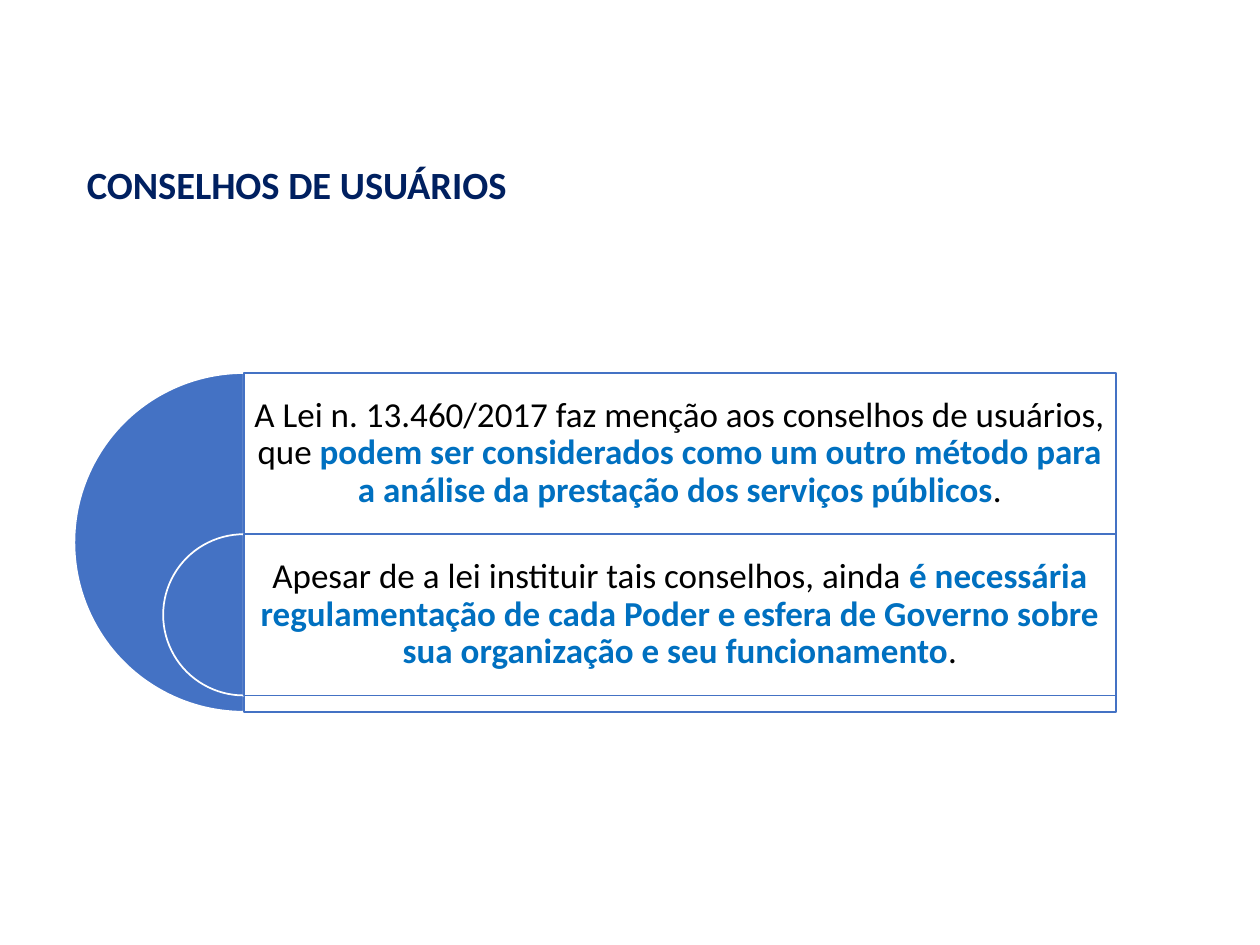
from dataclasses import dataclass

from lxml import etree
from pptx import Presentation
from pptx import util as u
from pptx.dml.color import RGBColor
from pptx.enum import shapes, text
from pptx.oxml.ns import qn

INK = {"navy": "002060", "blue": "4472C4", "key": "0070C0",
       "white": "FFFFFF", "black": "000000"}
LEFT, TOP = 1.5, 7.52        # outer half disc, cm
BIG, ROW = 6.83, 3.25        # disc diameter and row height, cm
AXIS, WIDE = LEFT + BIG / 2, 17.58


@dataclass
class Run:
    words: str
    color: str = "black"
    bold: bool = False


@dataclass
class Row:
    size: float              # diameter of the half disc and height of its panel
    top: float
    runs: list[Run]


ROWS = [
    Row(BIG, TOP, [
        Run("A Lei n. 13.460/2017 faz menção aos conselhos de usuários, que "),
        Run("podem ser considerados como um outro método para a análise da "
            "prestação dos serviços públicos", "key", True),
        Run(".")]),
    Row(ROW, TOP + ROW, [
        Run("Apesar de a lei instituir tais conselhos, ainda "),
        Run("é necessária regulamentação de cada Poder e esfera de Governo "
            "sobre sua organização e seu funcionamento", "key", True),
        Run(".")]),
]


def rgb(name: str) -> RGBColor:
    return RGBColor.from_string(INK[name])


def put_shape(slide, kind, x: float, y: float, w: float, h: float,
              fill: str, line: str):
    shape = slide.shapes.add_shape(kind, u.Cm(x), u.Cm(y), u.Cm(w), u.Cm(h))
    shape.shadow.inherit = False
    shape.fill.solid()
    shape.fill.fore_color.rgb = rgb(fill)
    shape.line.color.rgb = rgb(line)
    shape.line.width = u.Pt(1)
    return shape


def put_text(slide, runs: list[Run], x: float, y: float, w: float, h: float, *,
             size: float, align=text.PP_ALIGN.LEFT,
             anchor=text.MSO_ANCHOR.TOP, pad: float | None = None,
             space: float = 1.0) -> None:
    box = slide.shapes.add_textbox(u.Cm(x), u.Cm(y), u.Cm(w), u.Cm(h))
    frame = box.text_frame
    frame.word_wrap = True
    frame.vertical_anchor = anchor
    if pad is not None:
        frame.margin_left = frame.margin_right = u.Cm(pad)
        frame.margin_top = frame.margin_bottom = u.Cm(pad)
    para = frame.paragraphs[0]
    para.alignment = align
    para.line_spacing = space
    for item in runs:
        run = para.add_run()
        run.text = item.words
        run.font.name = "Calibri"
        run.font.size = u.Pt(size)
        run.font.bold = item.bold
        run.font.color.rgb = rgb(item.color)


def set_alpha(shape, share: int) -> None:
    """Make a solid fill opaque to the given percentage."""
    color = shape.fill._xPr.find(qn("a:solidFill"))[0]
    etree.SubElement(color, qn("a:alpha")).set("val", str(share * 1000))


def put_row(slide, row: Row) -> None:
    """Draw a left half disc, its panel and the text in the panel's top."""
    disc = put_shape(slide, shapes.MSO_SHAPE.PIE, AXIS - row.size / 2, row.top,
                     row.size, row.size, "blue", "white")
    disc.adjustments[0], disc.adjustments[1] = 54, 162   # 90 to 270 degrees
    panel = put_shape(slide, shapes.MSO_SHAPE.RECTANGLE, AXIS, row.top,
                      WIDE, row.size, "white", "blue")
    set_alpha(panel, 90)
    put_text(slide, row.runs, AXIS, row.top, WIDE, ROW, size=20, pad=0.2,
             align=text.PP_ALIGN.CENTER, anchor=text.MSO_ANCHOR.MIDDLE,
             space=0.9)


def main() -> None:
    deck = Presentation()
    deck.slide_width, deck.slide_height = u.Cm(25.4), u.Cm(19.05)
    slide = deck.slides.add_slide(deck.slide_layouts[6])
    put_text(slide, [Run("CONSELHOS DE USUÁRIOS", "navy", True)],
             LEFT, 3.12, 20, 1.2, size=22)
    for row in ROWS:
        put_row(slide, row)
    deck.save("out.pptx")


if __name__ == "__main__":
    main()
